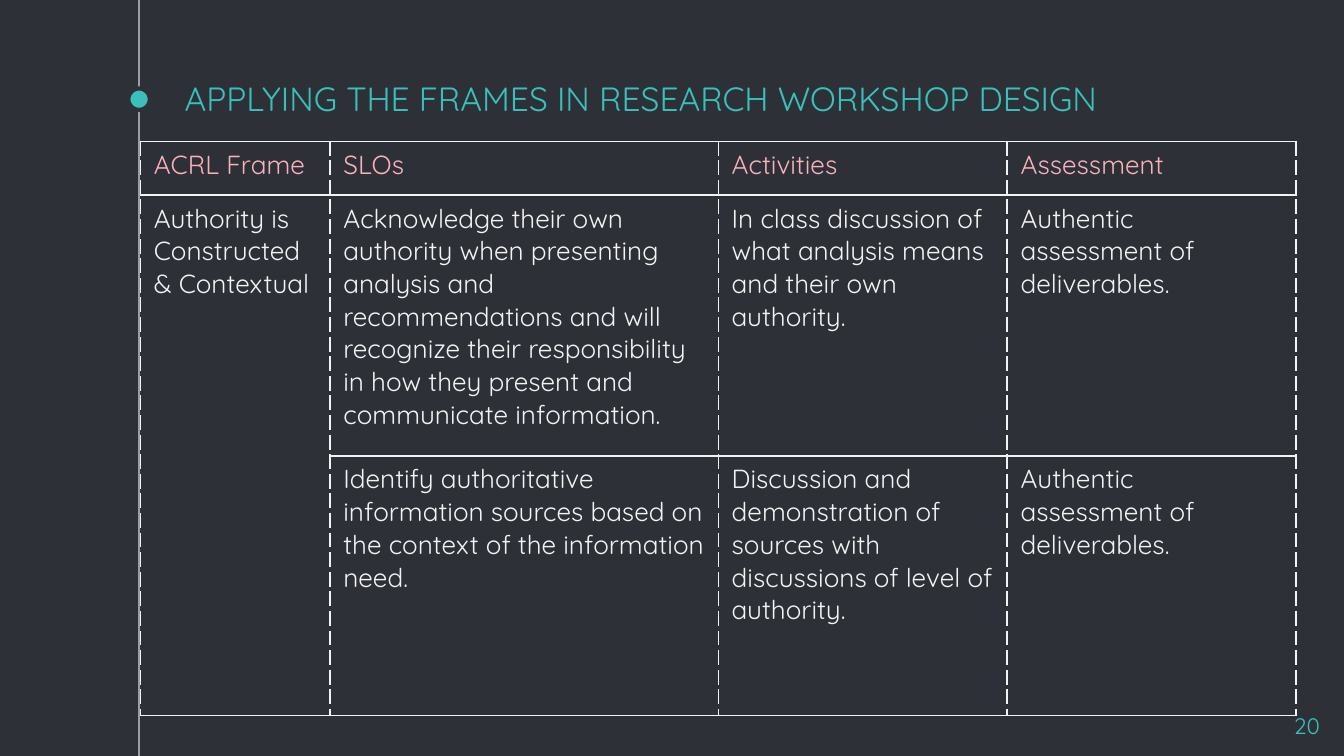
import pptx
import pptx.dml.color
import pptx.enum.shapes
import pptx.enum.text
import pptx.oxml
import pptx.oxml.ns
import pptx.util

# Widescreen, 16:9
WIDTH = pptx.util.Inches(10)
HEIGHT = WIDTH * 9 // 16
FONT = "Quicksand"
COLORS = {"background": "2E3037", "rail": "999FA9", "accent": "39C0BA",
          "header": "FAB2B9", "body": "F3F3F3"}

COLUMN_SHARES = [1.41, 2.89, 2.15, 2.15]
ROW_SHARES = [0.4, 1.94, 1.93]
FRAME_ROWS = [
    ["ACRL Frame", "SLOs", "Activities", "Assessment"],
    ["Authority is Constructed & Contextual",
     "Acknowledge their own authority when presenting analysis and "
     "recommendations and will recognize their responsibility in how they "
     "present and communicate information.",
     "In class discussion of what analysis means and their own authority.",
     "Authentic assessment of deliverables."],
    ["",
     "Identify authoritative information sources based on the context of the "
     "information need.",
     "Discussion and demonstration of sources with discussions of level of "
     "authority.",
     "Authentic assessment of deliverables."],
]


def rgb(name):
    return pptx.dml.color.RGBColor.from_string(COLORS[name])


def region(left, top, width, height):
    """Turn shares of the slide's size, in percent, into a box."""
    return [int(WIDTH * left / 100), int(HEIGHT * top / 100),
            int(WIDTH * width / 100), int(HEIGHT * height / 100)]


def format_runs(text_frame, size, color):
    for paragraph in text_frame.paragraphs:
        for run in paragraph.runs:
            run.font.name = FONT
            run.font.size = pptx.util.Pt(size)
            run.font.color.rgb = rgb(color)


def add_label(slide, box, text, size, anchor, alignment):
    frame = slide.shapes.add_textbox(*box).text_frame
    frame.word_wrap = True
    frame.vertical_anchor = anchor
    frame.margin_left = frame.margin_right = pptx.util.Inches(0.1)
    frame.margin_top = frame.margin_bottom = pptx.util.Inches(0.1)
    frame.text = text
    frame.paragraphs[0].alignment = alignment
    format_runs(frame, size, "accent")


def add_timeline(slide, box):
    """Full-height rail with a dot beside the title."""
    left, top, width, height = box
    center = left + width // 2
    rail = slide.shapes.add_connector(
        pptx.enum.shapes.MSO_CONNECTOR.STRAIGHT, center, top, center, top + height)
    rail.line.color.rgb = rgb("rail")
    rail.line.width = pptx.util.Pt(0.75)
    rail._element.spPr.append(pptx.oxml.parse_xml(
        f'<a:effectLst {pptx.oxml.ns.nsdecls("a")}/>'))

    dot = slide.shapes.add_shape(
        pptx.enum.shapes.MSO_SHAPE.OVAL, left, top + int(height * 0.117), width, width)
    dot.shadow.inherit = False
    dot.fill.solid()
    dot.fill.fore_color.rgb = rgb("accent")
    dot.line.color.rgb = rgb("background")
    dot.line.width = pptx.util.Pt(2.25)


def set_borders(cell):
    """Dashed sides, solid top and bottom."""
    properties = cell._tc.get_or_add_tcPr()
    sides = [("lnL", "sysDash"), ("lnR", "sysDash"), ("lnT", "solid"), ("lnB", "solid")]
    for position, (side, dash) in enumerate(sides):
        properties.insert(position, pptx.oxml.parse_xml(
            f'<a:{side} {pptx.oxml.ns.nsdecls("a")} w="{pptx.util.Pt(1)}">'
            f'<a:solidFill><a:srgbClr val="{COLORS["body"]}"/></a:solidFill>'
            f'<a:prstDash val="{dash}"/></a:{side}>'))


def add_frames_table(slide, box):
    width, height = box[2:]
    table = slide.shapes.add_table(len(ROW_SHARES), len(COLUMN_SHARES), *box).table
    table.first_row = table.horz_banding = False
    for column, share in zip(table.columns, COLUMN_SHARES):
        column.width = int(width * share / sum(COLUMN_SHARES))
    for row, share in zip(table.rows, ROW_SHARES):
        row.height = int(height * share / sum(ROW_SHARES))

    for r, texts in enumerate(FRAME_ROWS):
        for c, text in enumerate(texts):
            cell = table.cell(r, c)
            cell.fill.background()
            set_borders(cell)
            cell.text_frame.text = text
            format_runs(cell.text_frame, 14, "body" if r else "header")
    # One frame covers both outcomes
    table.cell(1, 0).merge(table.cell(2, 0))


def main():
    presentation = pptx.Presentation()
    presentation.slide_width, presentation.slide_height = WIDTH, HEIGHT
    slide = presentation.slides.add_slide(presentation.slide_layouts[6])
    slide.background.fill.solid()
    slide.background.fill.fore_color.rgb = rgb("background")

    anchor, align = pptx.enum.text.MSO_ANCHOR, pptx.enum.text.PP_ALIGN
    add_timeline(slide, region(9.55, 0, 1.6, 100))
    add_label(slide, region(12.75, 10.7, 75, 6.75),
              "APPLYING THE FRAMES IN RESEARCH WORKSHOP DESIGN",
              18, anchor.BOTTOM, align.LEFT)
    add_label(slide, region(93.2, 92.45, 6, 6), "20", 12, anchor.TOP, align.RIGHT)
    add_frames_table(slide, region(10.45, 18.7, 86, 75.95))
    presentation.save("out.pptx")


if __name__ == "__main__":
    main()
